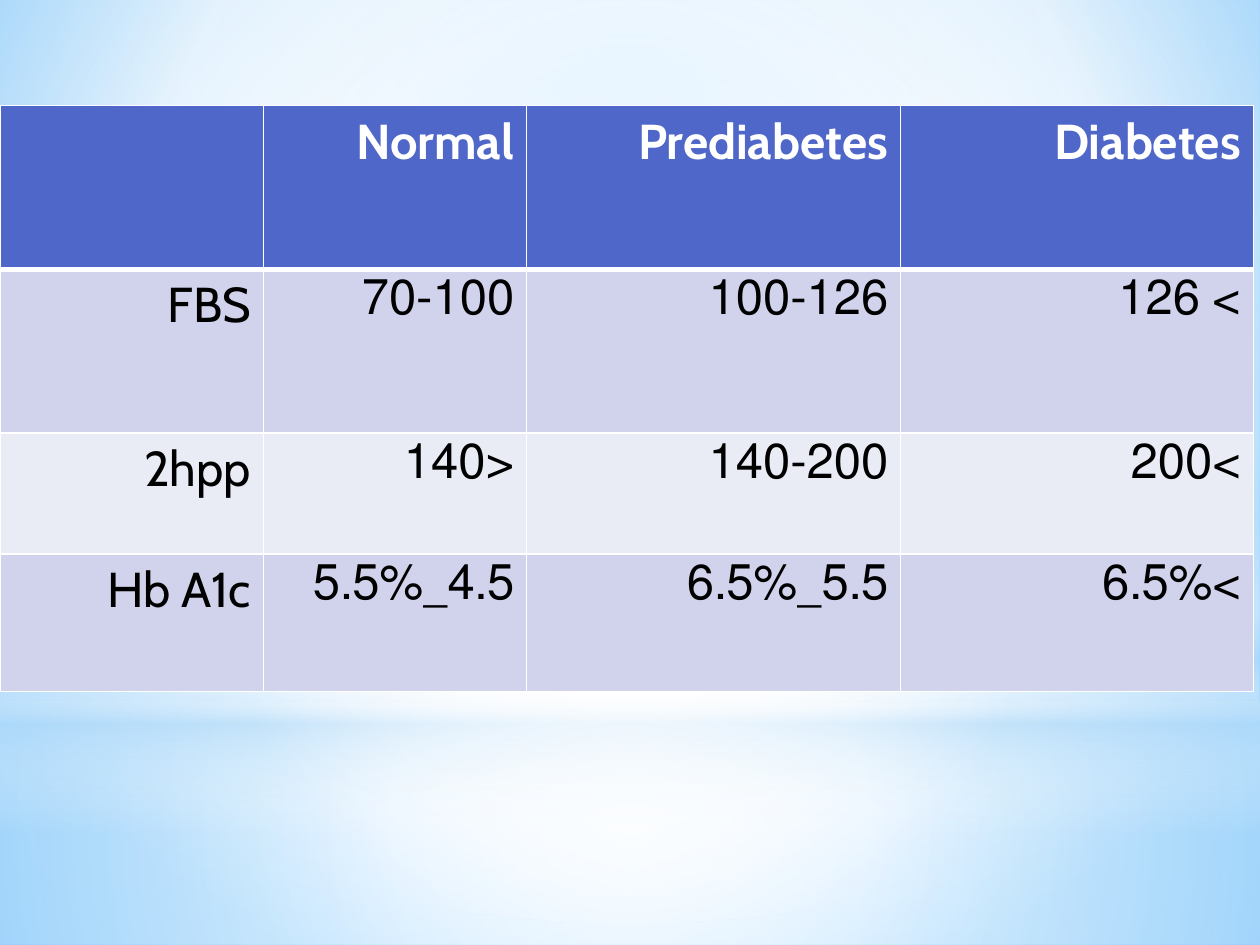
from lxml import etree
from pptx import Presentation
from pptx import util as u
from pptx.dml.color import RGBColor
from pptx.enum import shapes, text
from pptx.oxml.ns import qn

WHITE = RGBColor(0xFF, 0xFF, 0xFF)
BLACK = RGBColor(0x00, 0x00, 0x00)
SKY = RGBColor(0x9E, 0xD5, 0xFF)
DEEP_SKY = RGBColor(0x5B, 0xB9, 0xFF)
PALE_BLUE = RGBColor(0xB4, 0xDC, 0xFA)
HEADER_BLUE = RGBColor(0x4E, 0x67, 0xC8)
BAND_DARK = RGBColor(0xD0, 0xD3, 0xEB)
BAND_LIGHT = RGBColor(0xE9, 0xEB, 0xF5)

SLIDE_WIDTH, SLIDE_HEIGHT = u.Cm(25.4), u.Cm(19.05)
HORIZON = u.Cm(14.17)
CENTRE = (50, 50, 50, 50)
COLUMN_WIDTHS = (5.31, 5.31, 7.54, 7.11)
ROW_HEIGHTS = (3.3, 3.3, 2.44, 2.77)
ROWS = (
    ("", "Normal", "Prediabetes", "Diabetes"),
    ("FBS", "70-100", "100-126", "> 126"),
    ("2hpp", "<140", "140-200", ">200"),
    ("Hb A1c", "4.5_5.5%", "5.5_6.5%", ">6.5%"),
)


def add_color(parent, color, opacity=100):
    """Append a colour with its opacity in percent."""
    element = etree.SubElement(parent, qn("a:srgbClr"), val=str(color))
    if opacity < 100:
        etree.SubElement(element, qn("a:alpha"), val=str(opacity * 1000))


def set_gradient(fill, owner, stops, focus=None):
    """Fill with stops, circular around a focus or else from top to bottom."""
    fill.gradient()
    gradient = next(owner.iter(qn("a:gradFill")))
    for child in list(gradient):
        gradient.remove(child)
    stop_list = etree.SubElement(gradient, qn("a:gsLst"))
    for position, color, opacity in stops:
        stop = etree.SubElement(stop_list, qn("a:gs"), pos=str(position * 1000))
        add_color(stop, color, opacity)
    if focus is None:
        etree.SubElement(gradient, qn("a:lin"), ang="5400000", scaled="0")
    else:
        circle = etree.SubElement(gradient, qn("a:path"), path="circle")
        sides = {side: str(value * 1000) for side, value in zip("ltrb", focus)}
        etree.SubElement(circle, qn("a:fillToRect"), **sides)


def add_glow(slide, kind, box, stops, focus=CENTRE):
    """Add one borderless gradient shape in the given box."""
    shape = slide.shapes.add_shape(kind, *box)
    shape.shadow.inherit = False
    shape.line.fill.background()
    set_gradient(shape.fill, shape.element.spPr, stops, focus)


def add_backdrop(slide, left, top, width, height):
    """Paint the sky, the floor and the glow at the horizon."""
    set_gradient(slide.background.fill, slide.element,
                 ((0, SKY, 100), (60, WHITE, 100), (100, DEEP_SKY, 100)),
                 (20, 10, 20, 60))
    rectangle, oval = shapes.MSO_SHAPE.RECTANGLE, shapes.MSO_SHAPE.OVAL
    add_glow(slide, rectangle, (left, top + HORIZON, width, height - HORIZON),
             ((0, WHITE, 91), (37, WHITE, 76), (100, PALE_BLUE, 79)))
    add_glow(slide, rectangle, (left, top, width, HORIZON),
             ((0, WHITE, 89), (48, WHITE, 62), (100, PALE_BLUE, 79)))
    add_glow(slide, rectangle, (left, top + u.Cm(10.46), width, u.Cm(6.35)),
             ((0, WHITE, 0), (29, WHITE, 30), (45, PALE_BLUE, 40),
              (55, WHITE, 26), (65, PALE_BLUE, 60), (100, WHITE, 0)), None)
    add_glow(slide, oval, (left, top + u.Cm(4.45), width, HORIZON),
             ((0, WHITE, 100), (56, WHITE, 0)))


def set_borders(cell, top, bottom):
    """Draw white cell borders, with top and bottom widths in points."""
    properties = cell._tc.get_or_add_tcPr()
    for index, (side, width) in enumerate(
            (("L", 1), ("R", 1), ("T", top), ("B", bottom))):
        line = etree.Element(qn(f"a:ln{side}"), w=str(u.Pt(width)))
        add_color(etree.SubElement(line, qn("a:solidFill")), WHITE)
        properties.insert(index, line)


def write_cell(cell, words, color, bold):
    """Write right-to-left text aligned to the right."""
    paragraph = cell.text_frame.paragraphs[0]
    paragraph.alignment = text.PP_ALIGN.RIGHT
    paragraph._p.get_or_add_pPr().set("rtl", "1")
    paragraph.font.size = u.Pt(28)
    if words:
        run = paragraph.add_run()
        run.text = words
        run.font.name = "Cabin"
        run.font.size = u.Pt(28)
        run.font.bold = bold
        run.font.color.rgb = color


def add_threshold_table(slide, left, top, width, height):
    """Add the table of blood sugar thresholds."""
    table = slide.shapes.add_table(
        len(ROWS), len(COLUMN_WIDTHS), left, top, width, height).table
    for column, size in zip(table.columns, COLUMN_WIDTHS):
        column.width = u.Cm(size)
    for index, (row, size, words) in enumerate(
            zip(table.rows, ROW_HEIGHTS, ROWS)):
        row.height = u.Cm(size)
        header = index == 0
        band = HEADER_BLUE if header else (BAND_LIGHT, BAND_DARK)[index % 2]
        for cell, entry in zip(row.cells, words):
            cell.fill.solid()
            cell.fill.fore_color.rgb = band
            set_borders(cell, 3 if index == 1 else 1, 3 if header else 1)
            write_cell(cell, entry, WHITE if header else BLACK, header)


def main():
    """Build the slide and save it."""
    presentation = Presentation()
    presentation.slide_width = SLIDE_WIDTH
    presentation.slide_height = SLIDE_HEIGHT
    slide = presentation.slides.add_slide(presentation.slide_layouts[6])
    add_backdrop(slide, u.Cm(0), u.Cm(0), SLIDE_WIDTH, SLIDE_HEIGHT)
    add_threshold_table(slide, u.Cm(0), u.Cm(2.13),
                        u.Cm(sum(COLUMN_WIDTHS)), u.Cm(sum(ROW_HEIGHTS)))
    presentation.save("out.pptx")


if __name__ == "__main__":
    main()
